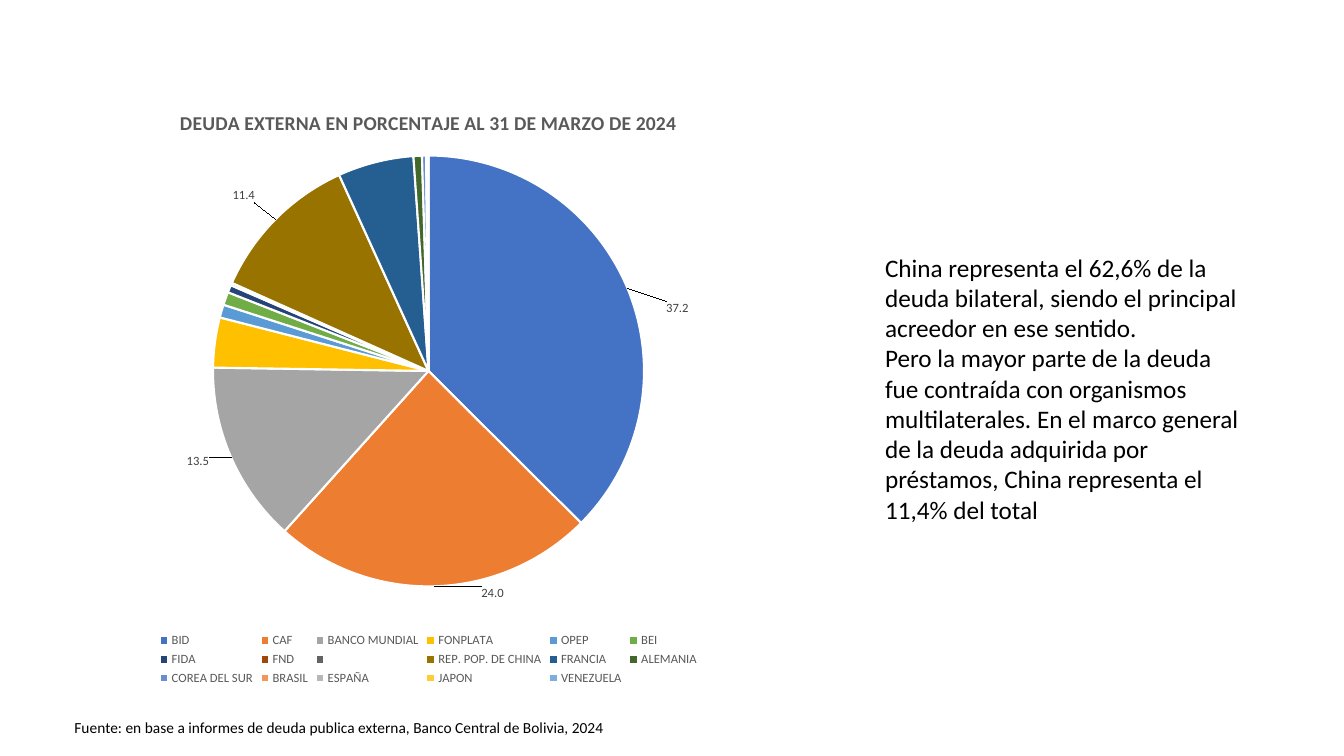
from lxml import etree
from pptx import Presentation
from pptx.chart.data import CategoryChartData
from pptx.dml.color import RGBColor
from pptx.enum import chart as charts, text
from pptx.oxml import ns
from pptx.util import Inches, Pt

FONT = "Calibri"
COLORS = {"black": "000000", "gray": "595959", "label": "404040", "white": "FFFFFF"}

# Creditor, share of the debt in percent, slice colour
CREDITORS = [
    ("BID", 37.2, "4472C4"),
    ("CAF", 24.0, "ED7D31"),
    ("BANCO MUNDIAL", 13.5, "A5A5A5"),
    ("FONPLATA", 3.72, "FFC000"),
    ("OPEP", 0.97, "5B9BD5"),
    ("BEI", 0.97, "70AD47"),
    ("FIDA", 0.56, "264478"),
    ("FND", 0.19, "9E480E"),
    ("", None, "636363"),
    ("REP. POP. DE CHINA", 11.4, "997300"),
    ("FRANCIA", 5.65, "255E91"),
    ("ALEMANIA", 0.63, "43682B"),
    ("COREA DEL SUR", 0.3, "698ED0"),
    ("BRASIL", 0.1, "F1975A"),
    ("ESPAÑA", 0.05, "B7B7B7"),
    ("JAPON", 0.03, "FFCD33"),
    ("VENEZUELA", 0.0, "7CAFDD"),
]
# Slice index: shift of its label as a fraction of the chart
LABEL_SHIFTS = {0: (0.04, 0.05), 1: (0.07, -0.01), 2: (-0.02, -0.01), 9: (-0.02, -0.02)}


def style_font(font, size, color, bold=False):
    font.name = FONT
    font.size = Pt(size)
    font.bold = bold
    font.color.rgb = RGBColor.from_string(COLORS[color])


def make_layout(**settings):
    layout = etree.Element(ns.qn("c:layout"))
    manual = etree.SubElement(layout, ns.qn("c:manualLayout"))
    for tag, value in settings.items():
        etree.SubElement(manual, ns.qn(f"c:{tag}")).set("val", str(value))
    return layout


def place_plot(chart):
    area = chart._chartSpace.chart.plotArea
    for old in area.findall(ns.qn("c:layout")):
        area.remove(old)
    area.insert(0, make_layout(layoutTarget="inner", xMode="edge", yMode="edge",
                               x=0.24, y=0.11, w=0.52, h=0.72))


def color_slices(series):
    for index, (_, _, color) in enumerate(CREDITORS):
        slice_format = series.points[index].format
        slice_format.fill.solid()
        slice_format.fill.fore_color.rgb = RGBColor.from_string(color)
        slice_format.line.color.rgb = RGBColor.from_string(COLORS["white"])
        slice_format.line.width = Pt(1.5)


def label_slices(series):
    labels = series.data_labels
    labels.show_value = False
    for index, (x, y) in LABEL_SHIFTS.items():
        label = series.points[index].data_label
        style_font(label.font, 9, "label")
        label.position = charts.XL_LABEL_POSITION.OUTSIDE_END
        entry = labels._element.xpath(f"c:dLbl[c:idx/@val='{index}']")[0]
        entry.insert(1, make_layout(x=x, y=y))


def add_debt_chart(page):
    data = CategoryChartData(number_format="0.0")
    data.categories = [name for name, _, _ in CREDITORS]
    data.add_series("Series 1", [share for _, share, _ in CREDITORS])
    frame = page.shapes.add_chart(charts.XL_CHART_TYPE.PIE, Inches(0.14), Inches(0.88),
                                  Inches(8.22), Inches(5.96), data)
    chart = frame.chart
    style_font(chart.font, 10, "black")

    # Title and legend
    chart.has_title = True
    para = chart.chart_title.text_frame.paragraphs[0]
    para.text = "DEUDA EXTERNA EN PORCENTAJE AL 31 DE MARZO DE 2024"
    style_font(para.runs[0].font, 14, "gray", bold=True)
    chart.has_legend = True
    chart.legend.position = charts.XL_LEGEND_POSITION.BOTTOM
    chart.legend.include_in_layout = False
    style_font(chart.legend.font, 9, "gray")

    # Slices
    place_plot(chart)
    plot = chart.plots[0]
    plot.vary_by_categories = True
    color_slices(plot.series[0])
    label_slices(plot.series[0])


def add_text(page, left, top, width, height, size, lines):
    box = page.shapes.add_textbox(Inches(left), Inches(top), Inches(width), Inches(height))
    frame = box.text_frame
    frame.word_wrap = True
    frame.auto_size = text.MSO_AUTO_SIZE.SHAPE_TO_FIT_TEXT
    frame.text = "\n".join(lines)
    for para in frame.paragraphs:
        for span in para.runs:
            style_font(span.font, size, "black")


def main():
    deck = Presentation()
    deck.slide_width, deck.slide_height = Inches(13.33), Inches(7.5)
    page = deck.slides.add_slide(deck.slide_layouts[6])

    add_debt_chart(page)

    # Commentary and source
    add_text(page, 8.68, 2.45, 3.74, 2.83, 18, [
        "China representa el 62,6% de la deuda bilateral, siendo el principal acreedor "
        "en ese sentido.",
        "Pero la mayor parte de la deuda fue contraída con organismos multilaterales. "
        "En el marco general de la deuda adquirida por préstamos, China representa el "
        "11,4% del total",
    ])
    add_text(page, 0.64, 7.07, 5.6, 0.29, 11, [
        "Fuente: en base a informes de deuda publica externa, Banco Central de Bolivia, 2024",
    ])

    deck.save("out.pptx")


if __name__ == "__main__":
    main()
